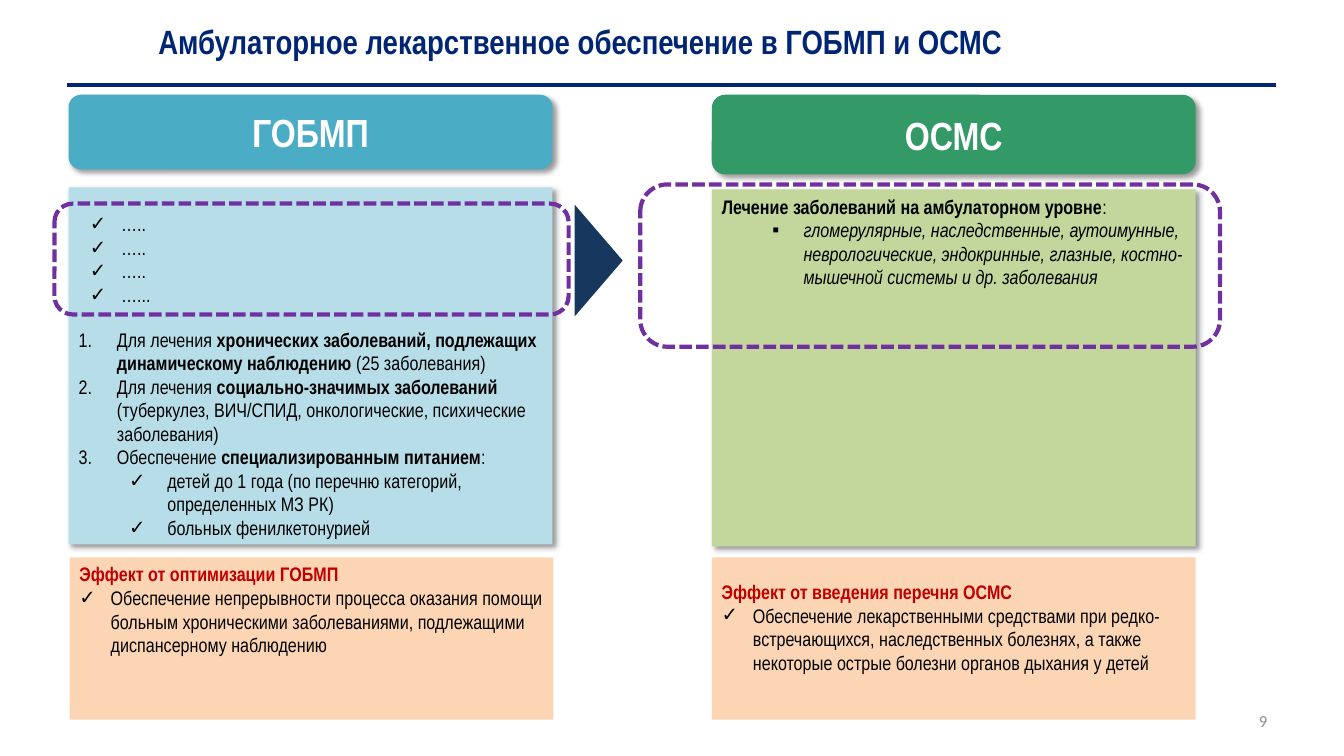
from dataclasses import dataclass
from lxml import etree
from pptx import Presentation
from pptx.dml.color import RGBColor
from pptx.enum.dml import MSO_LINE
from pptx.enum.shapes import MSO_CONNECTOR, MSO_SHAPE
from pptx.enum.text import MSO_ANCHOR, MSO_AUTO_SIZE, PP_ALIGN
from pptx.oxml.ns import qn
from pptx.util import Pt

PX = 9144
ROUND, TRIANGLE = MSO_SHAPE.ROUNDED_RECTANGLE, MSO_SHAPE.ISOSCELES_TRIANGLE
RECT, DASH = MSO_SHAPE.RECTANGLE, MSO_LINE.SQUARE_DOT
TOP, MIDDLE, BOTTOM = MSO_ANCHOR.TOP, MSO_ANCHOR.MIDDLE, MSO_ANCHOR.BOTTOM
LEFT, CENTER, RIGHT = PP_ALIGN.LEFT, PP_ALIGN.CENTER, PP_ALIGN.RIGHT
JUSTIFY, STRAIGHT = PP_ALIGN.JUSTIFY, MSO_CONNECTOR.STRAIGHT
COLORS = {
    "navy": "002673", "green": "339966", "teal": "4BACC6", "sky": "B7DEE8",
    "lime": "C3D69B", "peach": "FCD5B5", "purple": "7030A0", "arrow": "17375E",
    "red": "C00000", "black": "000000", "white": "FFFFFF", "gray": "8C8C8C",
}


@dataclass
class Style:
    """Look of one kind of paragraph, with indents in px."""
    mark: str = ""
    left: int = 0
    hang: int = 0
    level: int = 0
    color: str = "black"
    size: int = 14
    bold: bool = False
    italic: bool = False
    align: PP_ALIGN = LEFT
    face: str = "Arial Narrow"


STYLES = {
    "title": Style(color="navy", size=24, bold=True),
    "head": Style(color="white", size=28, bold=True, align=CENTER),
    "page": Style(color="gray", size=12, align=RIGHT, face="Calibri"),
    "num": Style("1.", 38, 38),
    "sub": Style("✓", 88, 38, 1),
    "dots": Style("✓", 51, 31),
    "lead": Style("", 31, 31, 1, align=JUSTIFY),
    "square": Style("▪", 81, 31, 2, italic=True),
    "effect": Style(color="red", bold=True),
    "check": Style("✓", 31, 31),
}
BENEFITS = [
    ("num", "Для лечения *хронических заболеваний, подлежащих динамическому наблюдению *(25 заболевания)"),
    ("num", "Для лечения *социально-значимых заболеваний *(туберкулез, ВИЧ/СПИД, онкологические, психические заболевания)"),
    ("num", "Обеспечение *специализированным питанием*:"),
    ("sub", "детей до 1 года (по перечню категорий, определенных МЗ РК)"),
    ("sub", "больных фенилкетонурией"),
]
CARE = [
    ("lead", "*Лечение заболеваний на амбулаторном уровне*: "),
    ("square", "гломерулярные, наследственные, аутоимунные, неврологические, эндокринные, глазные, костно-мышечной системы и др. заболевания"),
]
GAINS = [
    ("effect", "Эффект от оптимизации ГОБМП"),
    ("check", "Обеспечение непрерывности процесса оказания помощи больным хроническими заболеваниями, подлежащими диспансерному наблюдению"),
]
RESULTS = [
    ("effect", "Эффект от введения перечня ОСМС"),
    ("check", "Обеспечение лекарственными средствами при редко-встречающихся, наследственных болезнях, а также некоторые острые болезни органов дыхания у детей"),
]


def rgb(name):
    """Return a named colour."""
    return RGBColor.from_string(COLORS[name])


def place(shape, box):
    """Move a shape to a box given in px."""
    shape.left, shape.top, shape.width, shape.height = (n * PX for n in box)


def bullet(para, style):
    """Set the indent and the mark of a paragraph."""
    props = para._p.get_or_add_pPr()
    props.set("marL", str(style.left * PX))
    props.set("indent", str(-style.hang * PX))
    if not style.mark:
        etree.SubElement(props, qn("a:buNone"))
    elif style.mark == "1.":
        etree.SubElement(props, qn("a:buFont"), typeface="+mj-lt")
        etree.SubElement(props, qn("a:buAutoNum"), type="arabicPeriod")
    else:
        etree.SubElement(props, qn("a:buFont"), typeface="Arial")
        etree.SubElement(props, qn("a:buChar"), char=style.mark)


def write(shape, rows, anchor=MIDDLE):
    """Fill a shape with styled rows, where stars enclose bold words."""
    frame = shape.text_frame
    frame.word_wrap = True
    frame.auto_size = MSO_AUTO_SIZE.NONE
    frame.vertical_anchor = anchor
    for i, (kind, text) in enumerate(rows):
        style = STYLES[kind]
        para = frame.add_paragraph() if i else frame.paragraphs[0]
        para.level, para.alignment = style.level, style.align
        para.space_before = para.space_after = Pt(0)
        bullet(para, style)
        font = para.font
        font.name, font.size = style.face, Pt(style.size)
        font.bold, font.italic = style.bold, style.italic
        font.color.rgb = rgb(style.color)
        for j, part in enumerate(text.split("*")):
            if part:
                run = para.add_run()
                run.text = part
                if j % 2:
                    run.font.bold = True


def paint(shape, color):
    """Give a shape a plain fill without outline or shadow."""
    shape.fill.solid()
    shape.fill.fore_color.rgb = rgb(color)
    shape.line.fill.background()
    shape.shadow.inherit = False


def shade(shape):
    """Cast a soft shadow to the lower right."""
    list_ = shape._element.spPr.find(qn("a:effectLst"))
    cast = etree.SubElement(list_, qn("a:outerShdw"), blurRad=str(Pt(4)),
                            dist=str(Pt(3)), dir="2700000", algn="tl", rotWithShape="0")
    tint = etree.SubElement(cast, qn("a:srgbClr"), val=COLORS["black"])
    etree.SubElement(tint, qn("a:alpha"), val="40000")


def block(slide, kind, box, color):
    """Add a filled shape."""
    shape = slide.shapes.add_shape(kind, *(n * PX for n in box))
    paint(shape, color)
    return shape


def header(slide, box, color, text):
    """Add the rounded heading of a column."""
    shape = block(slide, ROUND, box, color)
    shade(shape)
    write(shape, [("head", text)])


def panel(holder, box, color, rows, anchor):
    """Turn a body placeholder into a coloured list panel."""
    place(holder, box)
    paint(holder, color)
    shade(holder)
    write(holder, rows, anchor)


def dashed(slide, box):
    """Add a dashed rounded frame."""
    shape = block(slide, ROUND, box, "white")
    shape.fill.background()
    shape.line.color.rgb = rgb("purple")
    shape.line.width = Pt(3)
    shape.line.dash_style = DASH
    return shape


def arrow(slide, box):
    """Add a triangle that points right and fills the box."""
    x, y, w, h = box
    turned = (x + (w - h) / 2, y + (h - w) / 2, h, w)
    shape = block(slide, TRIANGLE, [int(n) for n in turned], "arrow")
    shape.rotation = 90
    shape.line.color.rgb = rgb("white")
    shape.line.width = Pt(0.75)


def banner(slide, box):
    """Set the title and the rule under it."""
    x, y, w, h = box
    place(slide.shapes.title, (x + 81, y, 866, 61))
    write(slide.shapes.title, [("title", "Амбулаторное лекарственное обеспечение в ГОБМП и ОСМС")])
    ends = (x, y + h, x + w, y + h)
    rule = slide.shapes.add_connector(STRAIGHT, *(n * PX for n in ends))
    rule.line.color.rgb = rgb("navy")
    rule.line.width = Pt(3)
    etree.SubElement(rule._element.spPr, qn("a:effectLst"))


def effect(slide, box, rows, anchor, pad=5):
    """Add the box with the effect of a column."""
    shape = block(slide, RECT, box, "peach")
    shape.text_frame.margin_bottom = pad * PX
    write(shape, rows, anchor)


def main():
    """Build the slide and save it."""
    deck = Presentation()
    deck.slide_width, deck.slide_height = 1333 * PX, 750 * PX
    slide = deck.slides.add_slide(deck.slide_layouts[3])
    banner(slide, (66, 10, 1200, 74))
    header(slide, (706, 94, 480, 79), "green", "ОСМС")
    header(slide, (68, 94, 480, 74), "teal", "ГОБМП")
    panel(slide.placeholders[1], (68, 186, 480, 354), "sky", BENEFITS, BOTTOM)
    panel(slide.placeholders[2], (706, 188, 480, 354), "lime", CARE, TOP)
    gap = dashed(slide, (54, 202, 510, 110))
    write(gap, [("dots", text) for text in ("…..", "…..", "…..", "…...")])
    arrow(slide, (570, 202, 49, 114))
    dashed(slide, (635, 183, 575, 161))
    effect(slide, (69, 553, 480, 161), GAINS, TOP)
    effect(slide, (706, 553, 480, 161), RESULTS, MIDDLE, 28)
    page = slide.shapes.add_textbox(*(n * PX for n in (956, 695, 311, 40)))
    write(page, [("page", "9")])
    deck.save("out.pptx")


if __name__ == "__main__":
    main()
